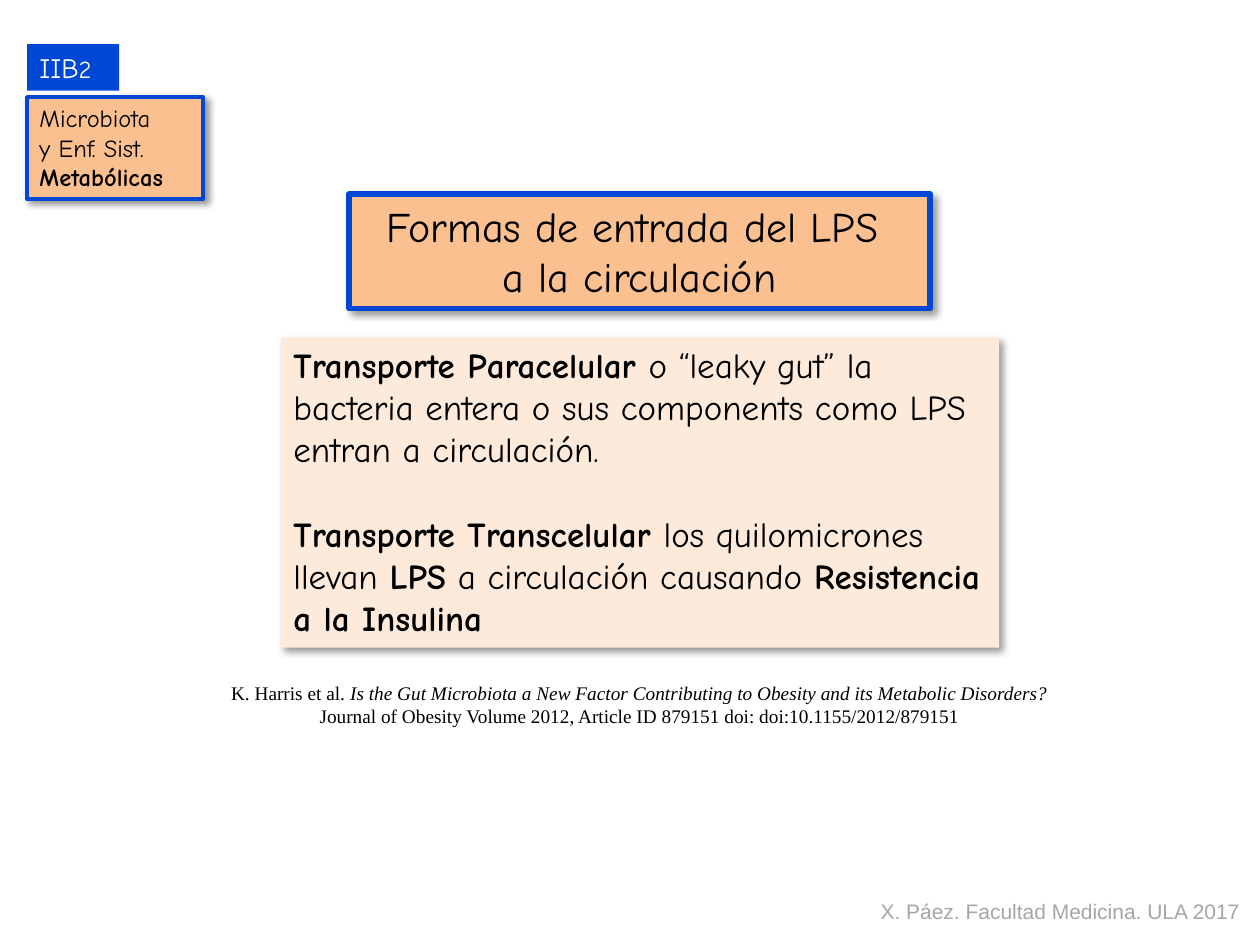
from pptx import Presentation
from pptx.dml.color import RGBColor
from pptx.enum.shapes import MSO_SHAPE
from pptx.enum.text import MSO_ANCHOR, MSO_AUTO_SIZE, PP_ALIGN
from pptx.oxml.ns import qn
from pptx.util import Pt
from lxml import etree

RECTANGLE = MSO_SHAPE.RECTANGLE
TOP = MSO_ANCHOR.TOP
GROW = MSO_AUTO_SIZE.SHAPE_TO_FIT_TEXT
LEFT, CENTER = PP_ALIGN.LEFT, PP_ALIGN.CENTER

BLUE, ORANGE, PEACH = "0047D6", "FAC090", "FDEADA"
BLACK, WHITE, GRAY = "000000", "FFFFFF", "A6A6A6"
COMIC, TIMES, ARIAL = "Comic Neue", "Times New Roman", "Arial"
BOLD, ITALIC = {"bold": True}, {"italic": True}


def color(hex_value):
    return RGBColor.from_string(hex_value)


def set_attributes(target, values):
    for name, value in values.items():
        setattr(target, name, value)


def place(element, left, top, width, height):
    set_attributes(element, {"left": Pt(left), "top": Pt(top),
                             "width": Pt(width), "height": Pt(height)})


def write(element, paragraphs, font, size, ink, align=LEFT, wrap=True, gap=0):
    frame = element.text_frame
    set_attributes(frame, {"word_wrap": wrap, "auto_size": GROW, "vertical_anchor": TOP})
    for index, pieces in enumerate(paragraphs):
        paragraph = frame.add_paragraph() if index else frame.paragraphs[0]
        paragraph.alignment = align
        if index and gap:
            paragraph.space_before = Pt(gap)
        for wording, emphasis in pieces:
            run = paragraph.add_run()
            run.text = wording
            run.font.color.rgb = color(ink)
            set_attributes(run.font, {"name": font, "size": Pt(size), "bold": False, **emphasis})


def paint(panel, fill, border=0, shadow=True):
    panel.fill.solid()
    panel.fill.fore_color.rgb = color(fill)
    if border:
        panel.line.color.rgb = color(BLUE)
        panel.line.width = Pt(border)
    else:
        panel.line.fill.background()
    panel.shadow.inherit = False
    if shadow:
        effects = panel._element.spPr.find(qn("a:effectLst"))
        outer = etree.SubElement(effects, qn("a:outerShdw"), blurRad=str(Pt(4)),
                                 dist=str(Pt(3)), dir="2700000", algn="tl", rotWithShape="0")
        tint = etree.SubElement(outer, qn("a:srgbClr"), val=BLACK)
        etree.SubElement(tint, qn("a:alpha"), val="40000")


def add_panel(slide, box, fill, border=0, shadow=True):
    panel = slide.shapes.add_shape(RECTANGLE, *map(Pt, box))
    paint(panel, fill, border, shadow)
    return panel


def add_note(slide, box, pieces, font, size, ink, align=LEFT, wrap=True):
    note = slide.shapes.add_textbox(*map(Pt, box))
    write(note, [pieces], font, size, ink, align, wrap)


def main():
    deck = Presentation()
    deck.slide_width, deck.slide_height = Pt(720), Pt(540)
    slide = deck.slides.add_slide(deck.slide_layouts[5])

    heading = slide.shapes.title
    place(heading, 199.5, 110.9, 332, 65.5)
    paint(heading, ORANGE, 3)
    write(heading, [[("Formas de entrada del LPS ", {})], [("a la circulación", {})]],
          COMIC, 24, BLACK, CENTER)

    transport = add_panel(slide, (160.6, 193, 410.4, 177.1), PEACH)
    write(transport, [
        [("Transporte Paracelular ", BOLD),
         ("o “leaky gut” la bacteria entera o sus components como LPS entran a circulación.", {})],
        [("Transporte Transcelular ", BOLD), ("los quilomicrones llevan ", {}), ("LPS", BOLD),
         (" a circulación causando ", {}), ("Resistencia a la Insulina", BOLD)],
    ], COMIC, 20, BLACK, gap=24)

    add_note(slide, (122.4, 385.9, 486, 33.8), [
        ("K. Harris et al. ", {}),
        ("Is the Gut Microbiota a New Factor Contributing to Obesity "
         "and its Metabolic Disorders? ", ITALIC),
        ("Journal of Obesity Volume 2012, Article ID 879151 doi: doi:10.1155/2012/879151", {}),
    ], TIMES, 11, BLACK, CENTER)
    add_note(slide, (496.1, 509.8, 221.8, 21.6),
             [("X. Páez. Facultad Medicina. ULA 2017", {})], ARIAL, 12, GRAY, wrap=False)

    section = add_panel(slide, (15.5, 25.2, 52.6, 26.6), BLUE, shadow=False)
    write(section, [[("IIB", {}), ("2", {"size": Pt(14)})]], COMIC, 16, WHITE, wrap=False)

    topic = add_panel(slide, (15.5, 55.5, 100.8, 58.3), ORANGE, 2.25)
    write(topic, [[("Microbiota", {})], [("y Enf. Sist.", {})], [("Metabólicas", BOLD)]],
          COMIC, 14, BLACK)

    deck.save("out.pptx")


if __name__ == "__main__":
    main()
